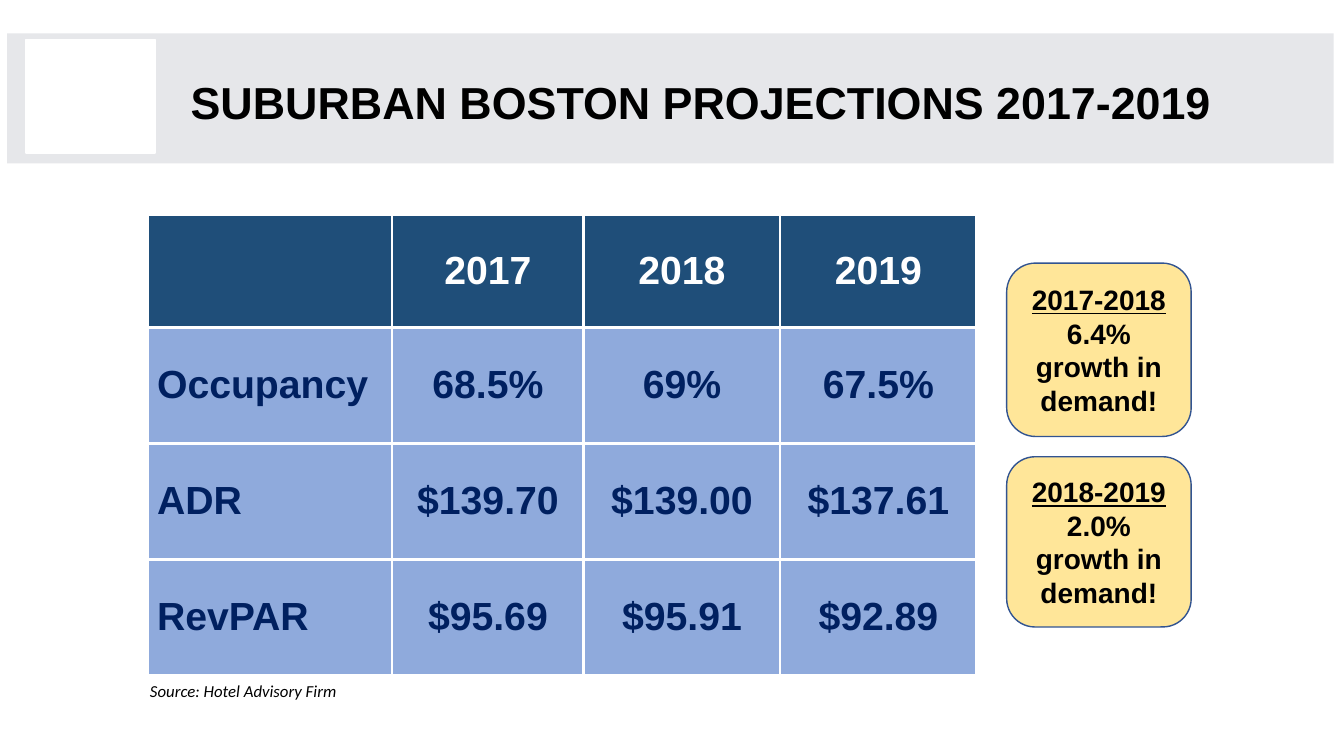
"""Build the slide of suburban Boston hotel projections for 2017 to 2019."""
import pptx
import pptx.util
import pptx.dml.color
import pptx.enum.shapes
import pptx.enum.text
import pptx.oxml

Cm, Pt = pptx.util.Cm, pptx.util.Pt
Shape = pptx.enum.shapes.MSO_SHAPE
Align = pptx.enum.text.PP_ALIGN
Anchor = pptx.enum.text.MSO_ANCHOR
hues = {"band": "E6E7EA", "white": "FFFFFF", "black": "000000", "head": "1F4E79",
        "body": "8FAADC", "navy": "002060", "note": "FFE699", "edge": "325491"}


def style(par, size, hue, face="Arial", bold=True, align=Align.LEFT):
    par.alignment = align
    for run in par.runs:
        run.font.name = face
        run.font.size = Pt(size)
        run.font.bold = bold
        run.font.color.rgb = pptx.dml.color.RGBColor.from_string(hues[hue])


def block(kind, box, fill, line=None):
    shape = slide.shapes.add_shape(kind, *map(Cm, box))
    shape.shadow.inherit = False
    shape.fill.solid()
    shape.fill.fore_color.rgb = pptx.dml.color.RGBColor.from_string(hues[fill])
    if line:
        shape.line.color.rgb = pptx.dml.color.RGBColor.from_string(hues[line])
        shape.line.width = Pt(1)
    else:
        shape.line.fill.background()
    return shape


deck = pptx.Presentation()
deck.slide_width, deck.slide_height = Cm(33.87), Cm(19.05)
slide = deck.slides.add_slide(deck.slide_layouts[5])

block(Shape.RECTANGLE, (0.18, 0.84, 33.43, 3.28), "band")
block(Shape.RECTANGLE, (0.66, 0.99, 3.25, 2.87), "white", "white")

title = slide.shapes.title
title.element.getparent().append(title.element)
title.left, title.top, title.width, title.height = Cm(4.55), Cm(1.83), Cm(27.18), Cm(1.63)
title.text_frame.text = "SUBURBAN BOSTON PROJECTIONS 2017-2019"
title.text_frame.vertical_anchor = Anchor.MIDDLE
title.text_frame.paragraphs[0].line_spacing = 0.9
style(title.text_frame.paragraphs[0], 32, "black")

rows = [
    ("", "2017", "2018", "2019"),
    ("Occupancy", "68.5%", "69%", "67.5%"),
    ("ADR", "$139.70", "$139.00", "$137.61"),
    ("RevPAR", "$95.69", "$95.91", "$92.89"),
]
grid = slide.shapes.add_table(4, 4, Cm(3.71), Cm(5.41), Cm(20.9), Cm(11.6)).table
for col, width in zip(grid.columns, (6.17, 4.83, 4.95, 4.95)):
    col.width = Cm(width)
for r, row in enumerate(rows):
    grid.rows[r].height = Cm(2.92 if r else 2.84)
    for c, text in enumerate(row):
        cell = grid.cell(r, c)
        cell.text_frame.text = text
        cell.vertical_anchor = Anchor.MIDDLE
        cell.margin_left = cell.margin_right = Cm(0.25)
        cell.margin_top = cell.margin_bottom = Cm(0.18)
        style(cell.text_frame.paragraphs[0], 28, "navy" if r else "white",
              align=Align.CENTER if c else Align.LEFT)
        props = cell._tc.get_or_add_tcPr()
        for side in ("lnL", "lnR", "lnT", "lnB"):
            props.append(pptx.oxml.parse_xml(
                f'<a:{side} xmlns:a="http://schemas.openxmlformats.org/drawingml/2006/main" '
                f'w="{Pt(2.25)}"><a:solidFill><a:srgbClr val="{hues["white"]}"/>'
                f'</a:solidFill></a:{side}>'))
        cell.fill.solid()
        cell.fill.fore_color.rgb = pptx.dml.color.RGBColor.from_string(
            hues["body" if r else "head"])

notes = [(6.63, 4.37, "2017-2018", "6.4%"), (11.51, 4.29, "2018-2019", "2.0%")]
for top, height, years, rate in notes:
    note = block(Shape.ROUNDED_RECTANGLE, (25.37, top, 4.65, height), "note", "edge")
    frame = note.text_frame
    frame.word_wrap = True
    frame.vertical_anchor = Anchor.MIDDLE
    frame.text = f"{years}\n{rate} growth in demand!"
    for par in frame.paragraphs:
        style(par, 20, "black", align=Align.CENTER)
    frame.paragraphs[0].runs[0].font.underline = True

source = slide.shapes.add_textbox(Cm(3.53), Cm(17.02), Cm(9.65), Cm(0.76)).text_frame
source.word_wrap = True
source.text = "Source: Hotel Advisory Firm"
style(source.paragraphs[0], 12, "black", "Calibri", False)
source.paragraphs[0].runs[0].font.italic = True

deck.save("out.pptx")
